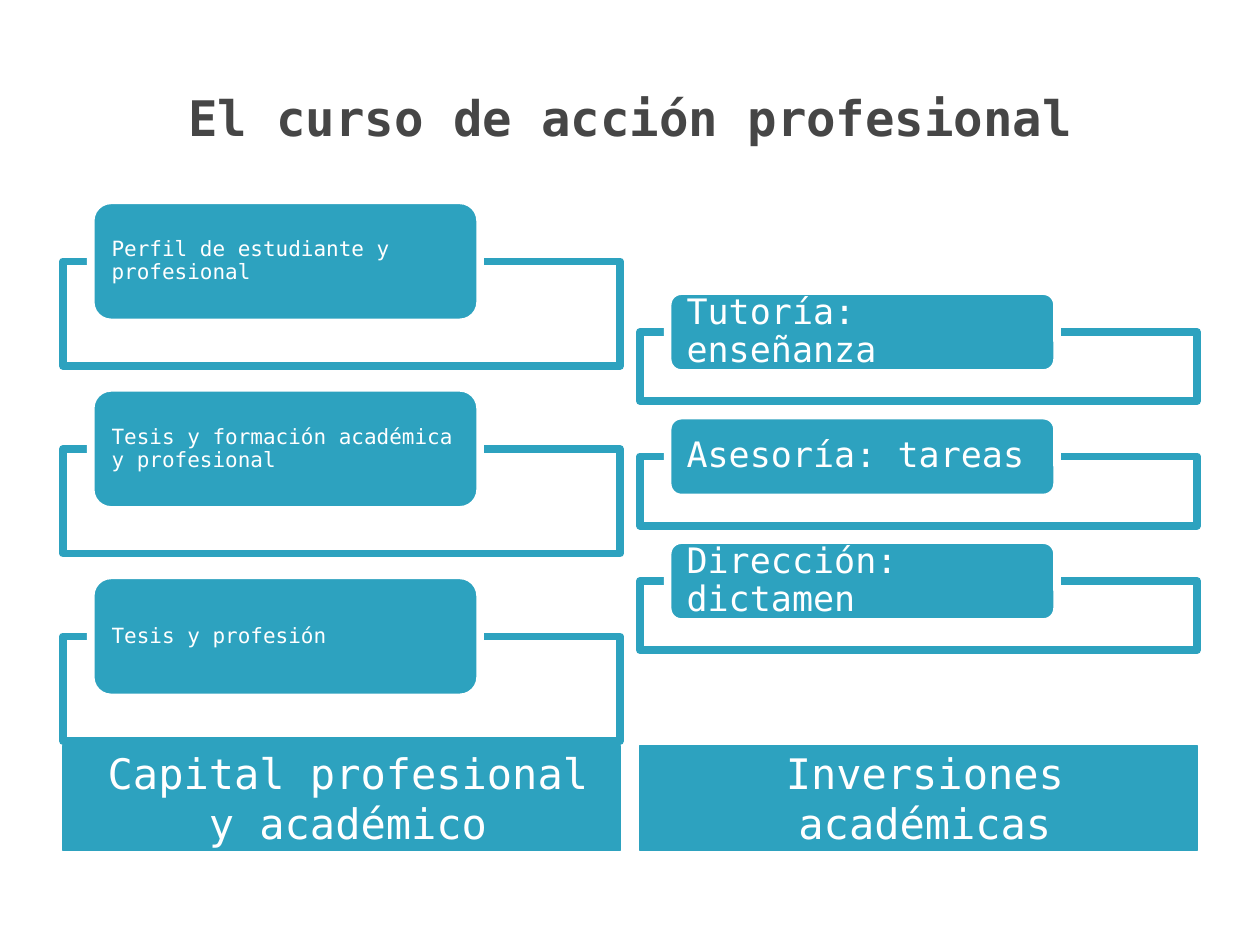
import pptx
import pptx.util
import pptx.dml.color
import pptx.enum.shapes
import pptx.enum.text
import pptx.oxml.ns
from lxml import etree

Cm, Pt = pptx.util.Cm, pptx.util.Pt
RGB = pptx.dml.color.RGBColor
KIND = pptx.enum.shapes.MSO_SHAPE
ALIGN = pptx.enum.text.PP_ALIGN
MIDDLE = pptx.enum.text.MSO_ANCHOR.MIDDLE

TEAL = RGB(0x2D, 0xA2, 0xBF)
WHITE = RGB(0xFF, 0xFF, 0xFF)
GREY = RGB(0x46, 0x46, 0x46)
FACE = "DejaVu Sans Mono"

TITLE = "El curso de acción profesional"
COLS = [
    {
        "head": "Capital profesional y académico",
        "items": [
            "Perfil de estudiante y profesional",
            "Tesis y formación académica y profesional",
            "Tesis y profesión",
        ],
        "left": 1.27, "top": 4.04, "step": 3.78,
        "chip": 2.46, "drop": 1.23, "frame": 2.11, "size": 12,
    },
    {
        "head": "Inversiones académicas",
        "items": ["Tutoría: enseñanza", "Asesoría: tareas", "Dirección: dictamen"],
        "left": 12.9, "top": 5.87, "step": 2.51,
        "chip": 1.65, "drop": 0.82, "frame": 1.4, "size": 20,
    },
]
WIDE = 11.23
INDENT = 0.56
CHIP = 7.85
HEAD = (15.03, 2.11)


def apply(target, values):
    for name, value in values.items():
        setattr(target, name, value)


def write(shape, text, font, para, pads):
    frame = shape.text_frame
    sides = ("margin_left", "margin_top", "margin_right", "margin_bottom")
    apply(frame, {"word_wrap": True, "vertical_anchor": MIDDLE})
    apply(frame, dict(zip(sides, map(Cm, pads))))
    line = frame.paragraphs[0]
    apply(line, para)
    run = line.add_run()
    run.text = text
    apply(run.font, {"name": FACE, **font})
    run.font.color.rgb = GREY if font.get("bold") else WHITE


def block(kind, area, fill, edge, width):
    shape = slide.shapes.add_shape(kind, *map(Cm, area))
    shape.shadow.inherit = False
    shape.fill.solid()
    shape.fill.fore_color.rgb = fill
    shape.line.color.rgb = edge
    shape.line.width = Pt(width)
    return shape


def fade(shape, share):
    tag = pptx.oxml.ns.qn
    color = shape.fill._xPr.find(tag("a:solidFill")).find(tag("a:srgbClr"))
    etree.SubElement(color, tag("a:alpha")).set("val", str(share * 1000))


deck = pptx.Presentation()
apply(deck, {"slide_width": Cm(25.4), "slide_height": Cm(19.05)})
slide = deck.slides.add_slide(deck.slide_layouts[6])

title = slide.shapes.add_textbox(Cm(1.27), Cm(0.76), Cm(22.86), Cm(3.18))
write(title, TITLE, {"size": Pt(28), "bold": True},
      {"alignment": ALIGN.CENTER}, (0.25, 0.13, 0.25, 0.13))

for col in COLS:
    left = col["left"]
    head = block(KIND.RECTANGLE, (left, HEAD[0], WIDE, HEAD[1]), TEAL, TEAL, 0.75)
    write(head, col["head"], {"size": Pt(24)},
          {"alignment": ALIGN.CENTER}, (0.51, 0.13, 0.25, 0.13))
    for row, text in enumerate(col["items"]):
        top = col["top"] + row * col["step"]
        frame = block(KIND.RECTANGLE, (left, top + col["drop"], WIDE, col["frame"]),
                      WHITE, TEAL, 4.33)
        fade(frame, 90)
        chip = block(KIND.ROUNDED_RECTANGLE, (left + INDENT, top, CHIP, col["chip"]),
                     TEAL, WHITE, 4.33)
        write(chip, text, {"size": Pt(col["size"])},
              {"alignment": ALIGN.LEFT, "line_spacing": 0.9}, (0.3, 0, 0.3, 0))

deck.save("out.pptx")
